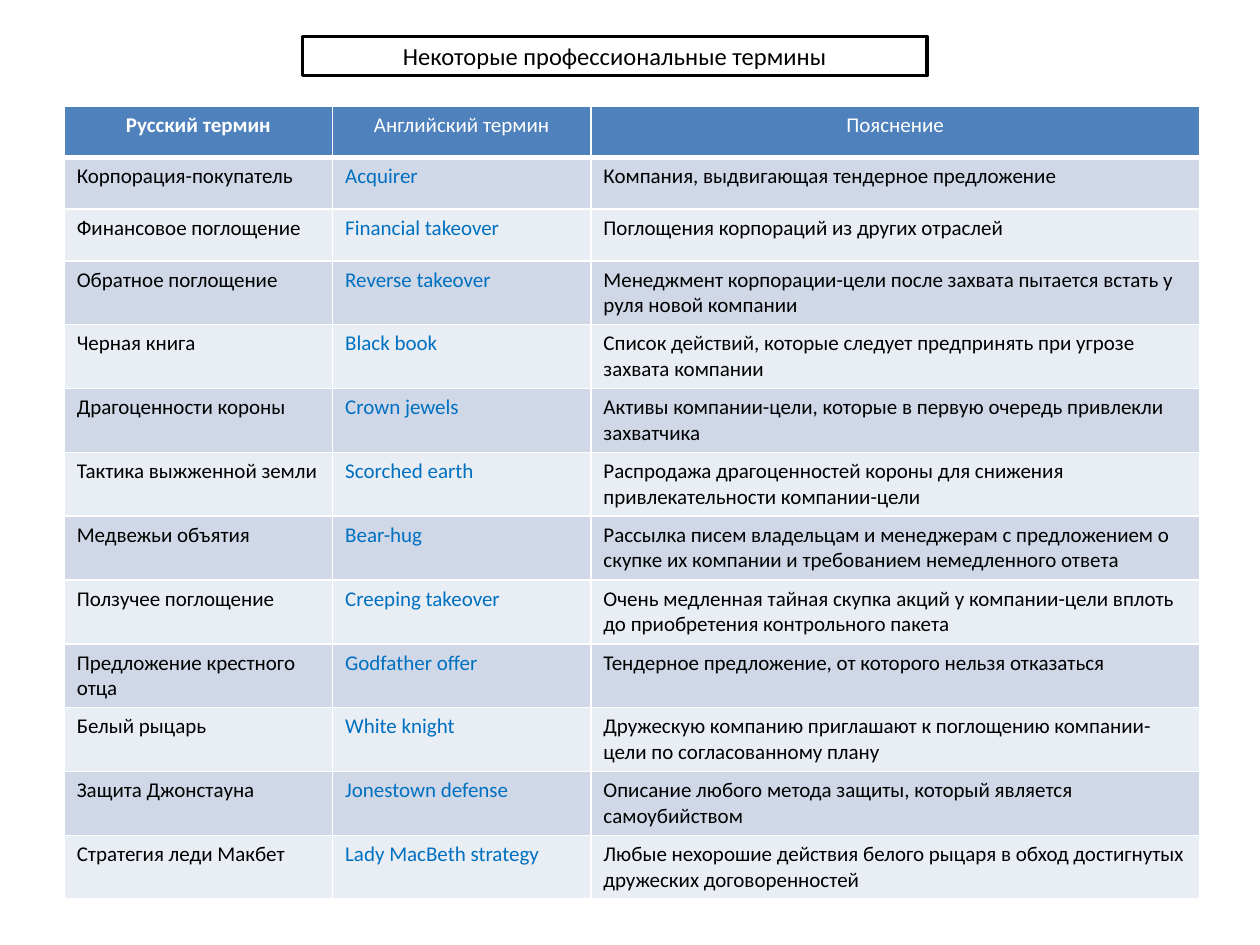
from typing import NamedTuple

from lxml.etree import SubElement
from pptx import Presentation
from pptx.dml.color import RGBColor
from pptx.enum.shapes import MSO_SHAPE as Shape
from pptx.enum.text import MSO_ANCHOR as Anchor, PP_ALIGN as Align
from pptx.oxml.ns import qn
from pptx.util import Inches, Pt

FONT = "Calibri"
WHITE = RGBColor(0xFF, 0xFF, 0xFF)
BLACK = RGBColor(0x00, 0x00, 0x00)
HEADER_BLUE = RGBColor(0x4F, 0x81, 0xBD)
TERM_BLUE = RGBColor(0x00, 0x70, 0xC0)
DARK_BAND = RGBColor(0xD0, 0xD8, 0xE8)
LIGHT_BAND = RGBColor(0xE9, 0xED, 0xF4)

COLUMN_WIDTHS = (2.13, 2.05, 4.83)
ROW_HEIGHT = 0.41


class Term(NamedTuple):
    russian: str
    english: str
    meaning: str


HEADER = Term("Русский термин", "Английский термин", "Пояснение")
TERMS = [
    Term("Корпорация-покупатель", "Acquirer",
         "Компания, выдвигающая тендерное предложение"),
    Term("Финансовое поглощение", "Financial takeover",
         "Поглощения корпораций из других отраслей"),
    Term("Обратное поглощение", "Reverse takeover",
         "Менеджмент корпорации-цели после захвата пытается встать у руля новой компании"),
    Term("Черная книга", "Black book",
         "Список действий, которые следует предпринять при угрозе захвата компании"),
    Term("Драгоценности короны", "Crown jewels",
         "Активы компании-цели, которые в первую очередь привлекли захватчика"),
    Term("Тактика выжженной земли", "Scorched earth",
         "Распродажа драгоценностей короны для снижения привлекательности компании-цели"),
    Term("Медвежьи объятия", "Bear-hug",
         "Рассылка писем владельцам и менеджерам с предложением о скупке их компании "
         "и требованием немедленного ответа"),
    Term("Ползучее поглощение", "Creeping takeover",
         "Очень медленная тайная скупка акций у компании-цели вплоть до приобретения "
         "контрольного пакета"),
    Term("Предложение крестного отца", "Godfather offer",
         "Тендерное предложение, от которого нельзя отказаться"),
    Term("Белый рыцарь", "White knight",
         "Дружескую компанию приглашают к поглощению компании-цели по согласованному плану"),
    Term("Защита Джонстауна", "Jonestown defense",
         "Описание любого метода защиты, который является самоубийством"),
    Term("Стратегия леди Макбет", "Lady MacBeth strategy",
         "Любые нехорошие действия белого рыцаря в обход достигнутых дружеских договоренностей"),
]


def write_text(frame, text: str, size: int, color: RGBColor,
               align: Align = Align.LEFT, bold: bool = False) -> None:
    frame.text = text
    paragraph = frame.paragraphs[0]
    paragraph.alignment = align
    paragraph.font.name = FONT
    paragraph.font.size = Pt(size)
    paragraph.font.bold = bold
    paragraph.font.color.rgb = color


def add_borders(cell, bottom: int = 1) -> None:
    """Draw white borders; call before the cell is filled, as the schema orders them so."""
    properties = cell._tc.get_or_add_tcPr()
    for side, width in (("L", 1), ("R", 1), ("T", 1), ("B", bottom)):
        line = SubElement(properties, qn(f"a:ln{side}"), w=str(Pt(width)))
        fill = SubElement(line, qn("a:solidFill"))
        SubElement(fill, qn("a:srgbClr"), val=str(WHITE))


def fill_cell(cell, color: RGBColor) -> None:
    cell.fill.solid()
    cell.fill.fore_color.rgb = color


def add_terms_table(slide) -> None:
    rows = len(TERMS) + 1
    table = slide.shapes.add_table(
        rows, len(COLUMN_WIDTHS), Inches(0.51), Inches(0.84),
        Inches(sum(COLUMN_WIDTHS)), Inches(ROW_HEIGHT * rows)).table
    for column, width in zip(table.columns, COLUMN_WIDTHS):
        column.width = Inches(width)
    for row in table.rows:
        row.height = Inches(ROW_HEIGHT)

    for index, text in enumerate(HEADER):
        cell = table.cell(0, index)
        add_borders(cell, bottom=3)
        fill_cell(cell, HEADER_BLUE)
        write_text(cell.text_frame, text, 12, WHITE, Align.CENTER, bold=index == 0)

    for row_index, term in enumerate(TERMS, start=1):
        band = DARK_BAND if row_index % 2 else LIGHT_BAND
        for index, (text, color) in enumerate(zip(term, (BLACK, TERM_BLUE, BLACK))):
            cell = table.cell(row_index, index)
            add_borders(cell)
            fill_cell(cell, band)
            write_text(cell.text_frame, text, 12, color)


def add_title_box(slide) -> None:
    box = slide.shapes.add_shape(
        Shape.RECTANGLE, Inches(2.4), Inches(0.29), Inches(4.96), Inches(0.31))
    box.shadow.inherit = False
    box.fill.solid()
    box.fill.fore_color.rgb = WHITE
    box.line.color.rgb = BLACK
    box.line.width = Pt(2)
    box.text_frame.word_wrap = True
    box.text_frame.vertical_anchor = Anchor.MIDDLE
    write_text(box.text_frame, "Некоторые профессиональные термины", 14, BLACK, Align.CENTER)


def main() -> None:
    presentation = Presentation()
    presentation.slide_width = Inches(10)
    presentation.slide_height = Inches(7.5)
    slide = presentation.slides.add_slide(presentation.slide_layouts[6])
    add_terms_table(slide)
    add_title_box(slide)
    presentation.save("out.pptx")


if __name__ == "__main__":
    main()
